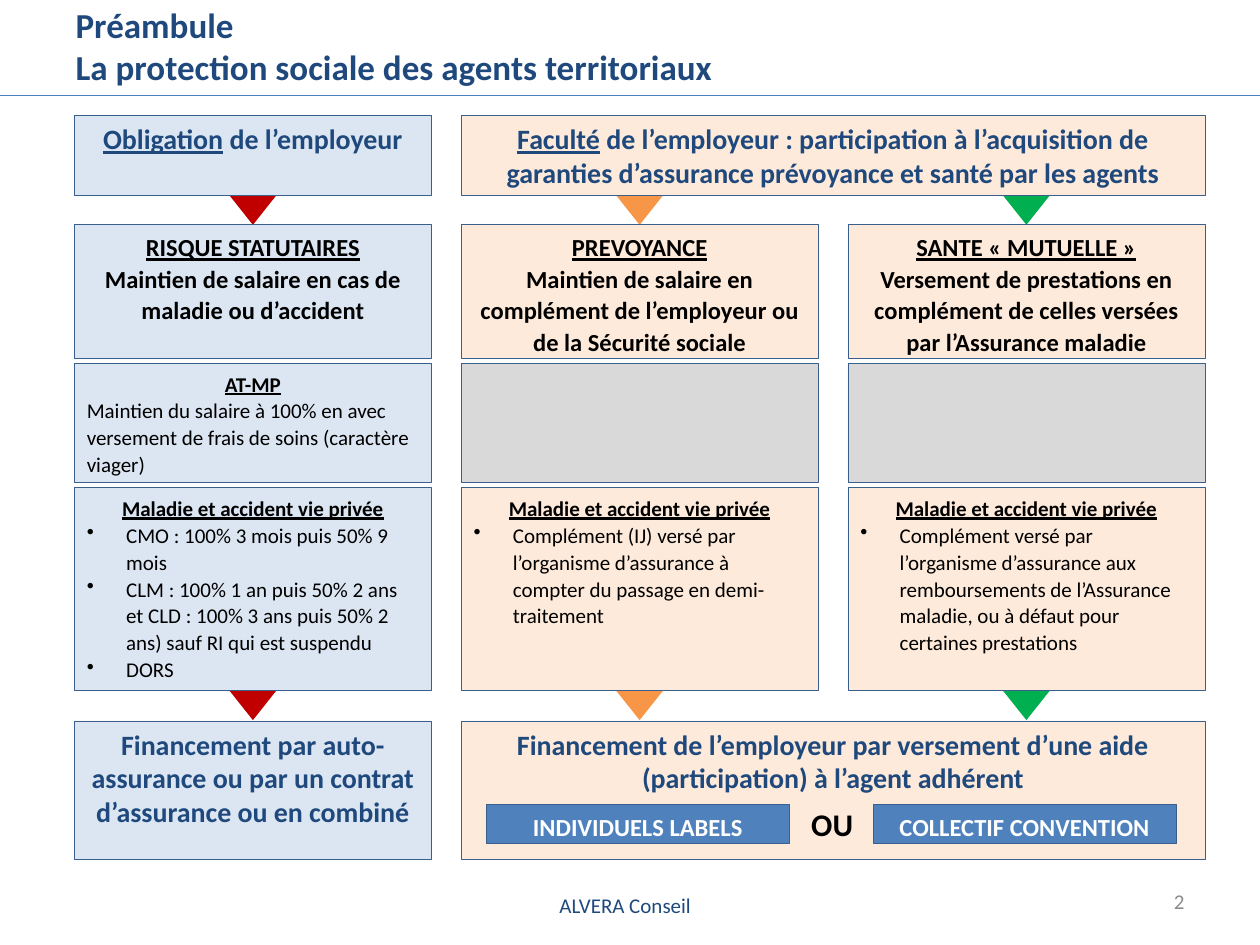
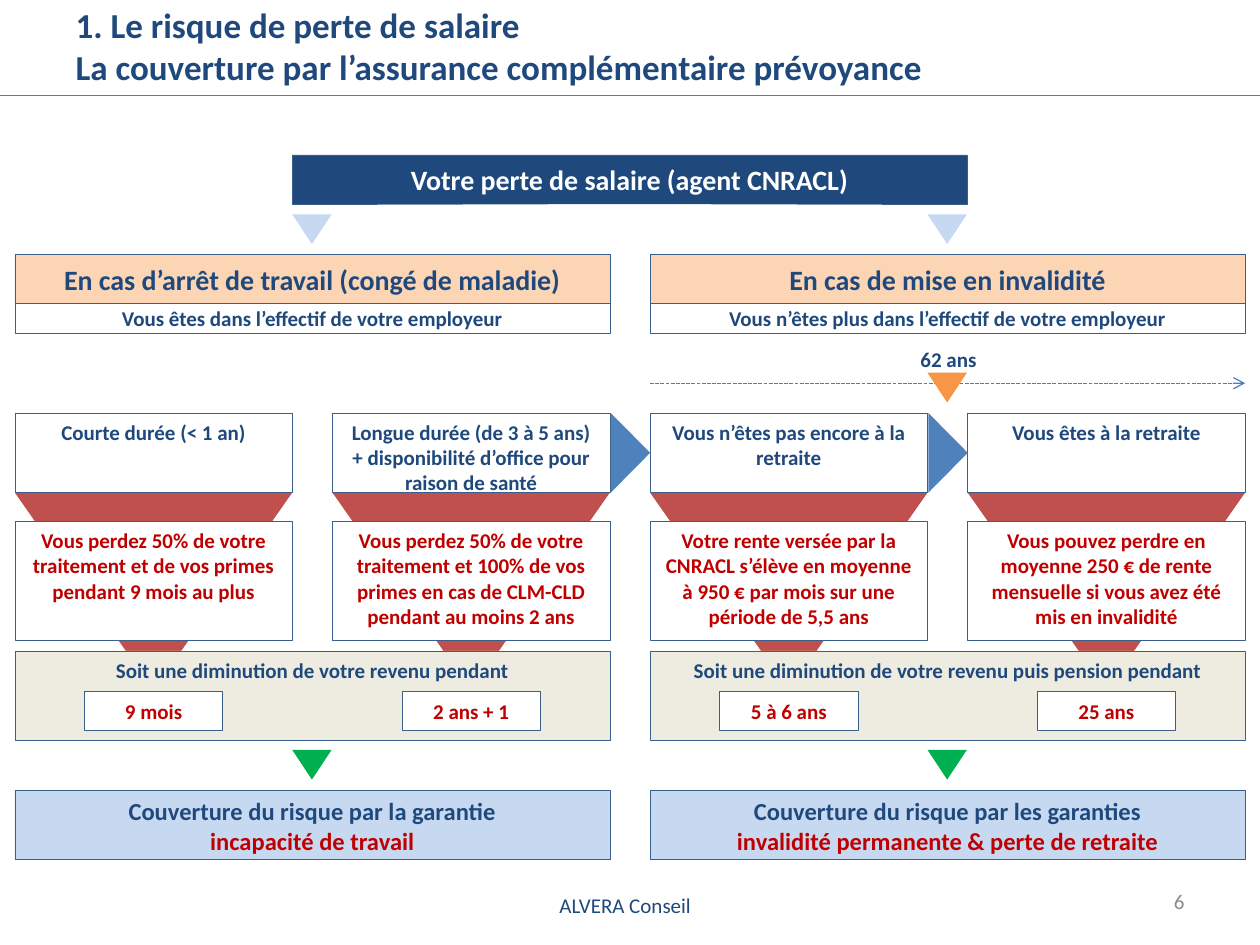
import lxml.etree
import pptx
import pptx.dml.color
import pptx.enum.dml
import pptx.enum.shapes
import pptx.enum.text
import pptx.oxml.ns
import pptx.util

NAVY = pptx.dml.color.RGBColor(0x1F, 0x49, 0x7D)
BLUE = pptx.dml.color.RGBColor(0x4F, 0x81, 0xBD)
RULE = pptx.dml.color.RGBColor(0x4B, 0x7E, 0xBC)
EDGE = pptx.dml.color.RGBColor(0x3A, 0x5F, 0x8C)
ICE = pptx.dml.color.RGBColor(0xDC, 0xE6, 0xF2)
SKY = pptx.dml.color.RGBColor(0xC6, 0xD9, 0xF1)
CREAM = pptx.dml.color.RGBColor(0xFD, 0xEA, 0xDA)
PEACH = pptx.dml.color.RGBColor(0xFC, 0xD5, 0xB5)
SAND = pptx.dml.color.RGBColor(0xEE, 0xEC, 0xE1)
GREY = pptx.dml.color.RGBColor(0xD9, 0xD9, 0xD9)
DIM = pptx.dml.color.RGBColor(0x8C, 0x8C, 0x8C)
RED = pptx.dml.color.RGBColor(0xC0, 0x00, 0x00)
BRICK = pptx.dml.color.RGBColor(0xC0, 0x50, 0x4D)
AMBER = pptx.dml.color.RGBColor(0xF7, 0x96, 0x46)
GREEN = pptx.dml.color.RGBColor(0x00, 0xB0, 0x50)
BLACK = pptx.dml.color.RGBColor(0, 0, 0)
WHITE = pptx.dml.color.RGBColor(0xFF, 0xFF, 0xFF)

RECT = pptx.enum.shapes.MSO_SHAPE.RECTANGLE
PEAK = pptx.enum.shapes.MSO_SHAPE.ISOSCELES_TRIANGLE
WIRE = pptx.enum.shapes.MSO_CONNECTOR.STRAIGHT
MID = pptx.enum.text.MSO_ANCHOR.MIDDLE
TOP = pptx.enum.text.MSO_ANCHOR.TOP
SIDES = {"c": pptx.enum.text.PP_ALIGN.CENTER, "r": pptx.enum.text.PP_ALIGN.RIGHT}
LEFT = pptx.enum.text.PP_ALIGN.LEFT


def write(shape, paras, size, tint, anchor=TOP, pitch=None):
    """Fill a shape with text.

    A para is a string (centred, bold) or a tuple: its kind (c, l, r or •),
    then runs of (text, marks), where b is bold, u underlined, r red.
    A newline in a run is a line break.
    """
    frame = shape.text_frame
    frame.word_wrap = True
    frame.vertical_anchor = anchor
    for i, para in enumerate(paras):
        kind, *runs = ("c", (para, "b")) if isinstance(para, str) else para
        par = frame.add_paragraph() if i else frame.paragraphs[0]
        par.alignment = SIDES.get(kind, LEFT)
        if pitch:
            par.line_spacing = pitch
        if kind == "•":
            props = par._p.get_or_add_pPr()
            props.set("marL", str(pptx.util.Pt(22.5)))
            props.set("indent", str(pptx.util.Pt(-22.5)))
            lxml.etree.SubElement(props, pptx.oxml.ns.qn("a:buChar"), char="•")
        for text, marks in runs:
            for j, piece in enumerate(text.split("\n")):
                if j:
                    par.add_line_break()
                run = par.add_run()
                run.text = piece
                run.font.name = "Calibri"
                run.font.size = pptx.util.Pt(size)
                run.font.bold = "b" in marks
                run.font.underline = "u" in marks
                run.font.color.rgb = RED if "r" in marks else tint


def draw(slide, kind, x, y, w, h, fill, turn=0):
    """Add an edged rectangle or a plain triangle."""
    shape = slide.shapes.add_shape(kind, *map(pptx.util.Pt, (x, y, w, h)))
    shape.shadow.inherit = False
    shape.rotation = turn
    shape.fill.solid()
    shape.fill.fore_color.rgb = fill
    if kind == RECT:
        shape.line.color.rgb = EDGE
        shape.line.width = pptx.util.Pt(0.25)
    else:
        shape.line.fill.background()
    return shape


deck = pptx.Presentation()
deck.slide_width = pptx.util.Pt(720)
deck.slide_height = pptx.util.Pt(540)

# Title, rule and footer of every slide
wires = []
heads = [
    ("Préambule\nLa protection sociale des agents territoriaux", "2"),
    ("1. Le risque de perte de salaire\n"
     "La couverture par l’assurance complémentaire prévoyance", "6"),
]
for head, num in heads:
    slide = deck.slides.add_slide(deck.slide_layouts[5])
    title = slide.shapes.title
    title.left, title.top, title.width, title.height = map(pptx.util.Pt, (36, 9.5, 648, 33))
    title.text_frame.auto_size = pptx.enum.text.MSO_AUTO_SIZE.NONE
    write(title, [("l", (head, "b"))], 20, NAVY, MID)
    wires.append(slide.shapes.add_connector(WIRE, 0, pptx.util.Pt(54.5),
                                            deck.slide_width, pptx.util.Pt(54.5)))
    for x, y, w, kind, text, tint in [(212.5, 502.5, 289.5, "c", "ALVERA Conseil", NAVY),
                                      (516, 500.5, 168, "r", num, DIM)]:
        foot = slide.shapes.add_textbox(*map(pptx.util.Pt, (x, y, w, 29)))
        write(foot, [(kind, (text, ""))], 12, tint, MID)

# Slide 1: three kinds of cover, from duty to funding
slide = deck.slides[0]
cols = [42.5 + 221 * i for i in range(3)]
wide, full = 204, 425

for x, tint in zip(cols, (RED, AMBER, GREEN)):
    for y in (111.5, 394.5):
        draw(slide, PEAK, x + (wide - 27) / 2, y, 27, 17, tint, 180)

bands = [
    (0, wide, ICE, ("c", ("Obligation", "bu"), (" de l’employeur", "b")),
     "Financement par auto-assurance ou par un contrat d’assurance ou en combiné"),
    (1, full, CREAM,
     ("c", ("Faculté", "bu"),
      (" de l’employeur : participation à l’acquisition de garanties "
       "d’assurance prévoyance et santé par les agents", "b")),
     "Financement de l’employeur par versement d’une aide (participation) à l’agent adhérent"),
]
for i, w, fill, duty, fund in bands:
    write(draw(slide, RECT, cols[i], 66, w, 45.5, fill), [duty], 16, NAVY)
    write(draw(slide, RECT, cols[i], 412, w, 79, fill), [fund], 16, NAVY)

covers = [
    (ICE, "RISQUE STATUTAIRES", "Maintien de salaire en cas de maladie ou d’accident",
     ["CMO : 100% 3 mois puis 50% 9 mois",
      "CLM : 100% 1 an puis 50% 2 ans et CLD : 100% 3 ans puis 50% 2 ans) "
      "sauf RI qui est suspendu",
      "DORS"]),
    (CREAM, "PREVOYANCE",
     "Maintien de salaire en complément de l’employeur ou de la Sécurité sociale",
     ["Complément (IJ) versé par l’organisme d’assurance à compter du passage "
      "en demi-traitement"]),
    (CREAM, "SANTE « MUTUELLE »",
     "Versement de prestations en complément de celles versées par l’Assurance maladie",
     ["Complément versé par l’organisme d’assurance aux remboursements de "
      "l’Assurance maladie, ou à défaut pour certaines prestations"]),
]
for x, (fill, name, goal, items) in zip(cols, covers):
    write(draw(slide, RECT, x, 128, wide, 76.5, fill),
          [("c", (name, "bu")), goal], 14, BLACK, pitch=1.07)
    work = draw(slide, RECT, x, 207.5, wide, 68, ICE if fill == ICE else GREY)
    if fill == ICE:
        write(work, [("c", ("AT-MP", "bu")),
                     ("l", ("Maintien du salaire à 100% en avec versement de "
                            "frais de soins (caractère viager)", ""))],
              12, BLACK, pitch=1.07)
    write(draw(slide, RECT, x, 278.5, wide, 116, fill),
          [("c", ("Maladie et accident vie privée", "bu"))]
          + [("•", (item, "")) for item in items], 12, BLACK, pitch=1.07)

for x, text in zip((278, 499), ("INDIVIDUELS LABELS", "COLLECTIF CONVENTION")):
    write(draw(slide, RECT, x, 459.5, 173, 22.5, BLUE), [text], 14, WHITE, pitch=1.07)
choice = slide.shapes.add_textbox(*map(pptx.util.Pt, (456.5, 456.5, 39, 29)))
write(choice, [("l", ("OU", "b"))], 18, BLACK)
choice.text_frame.word_wrap = False

# Slide 2: two halves of two cases each
slide = deck.slides[1]
cols = [8.5 + 181.5 * i for i in range(4)]
wide, half = 158.5, 340

for x in cols:
    draw(slide, PEAK, x, 281.5, wide, 113, BRICK, 180)
write(draw(slide, RECT, 167, 88.5, 385.5, 28, NAVY),
      ["Votre perte de salaire (agent CNRACL)"], 16, WHITE, MID)

halves = [
    ("En cas d’arrêt de travail (congé de maladie)",
     "Vous êtes dans l’effectif de votre employeur",
     "Soit une diminution de votre revenu pendant",
     "Couverture du risque par la garantie", "incapacité de travail"),
    ("En cas de mise en invalidité",
     "Vous n’êtes plus dans l’effectif de votre employeur",
     "Soit une diminution de votre revenu puis pension pendant",
     "Couverture du risque par les garanties", "invalidité permanente & perte de retraite"),
]
for x, mark, (case, state, drop, cover, risk) in zip(cols[::2], (167, 530), halves):
    draw(slide, PEAK, mark, 122.5, 22.5, 17, SKY, 180)
    write(draw(slide, RECT, x, 145.5, half, 28, PEACH), [case], 16, NAVY, MID)
    write(draw(slide, RECT, x, 173.5, half, 17, WHITE), [state], 12, NAVY, MID)
    write(draw(slide, RECT, x, 372, half, 51, SAND), [drop], 12, NAVY)
    draw(slide, PEAK, mark, 428.5, 22.5, 17, GREEN, 180)
    write(draw(slide, RECT, x, 451.5, half, 39.5, SKY),
          [cover, ("c", (risk, "br"))], 14, NAVY)

cases = [
    ("Courte durée (< 1 an)",
     "Vous perdez 50% de votre traitement et de vos primes pendant 9 mois au plus", "9 mois"),
    ("Longue durée (de 3 à 5 ans) + disponibilité d’office pour raison de santé",
     "Vous perdez 50% de votre traitement et 100% de vos primes en cas de CLM-CLD "
     "pendant au moins 2 ans", "2 ans + 1"),
    ("Vous n’êtes pas encore à la retraite",
     "Votre rente versée par la CNRACL s’élève en moyenne à 950 € par mois sur une "
     "période de 5,5 ans", "5 à 6 ans"),
    ("Vous êtes à la retraite",
     "Vous pouvez perdre en moyenne 250 € de rente mensuelle si vous avez été mis en "
     "invalidité", "25 ans"),
]
for x, (span, loss, time) in zip(cols, cases):
    write(draw(slide, RECT, x, 236, wide, 45.5, WHITE), [span], 12, NAVY)
    write(draw(slide, RECT, x, 298, wide, 68, WHITE), [loss], 12, RED)
    write(draw(slide, RECT, x + (wide - 79) / 2, 395, 79, 22.5, WHITE), [time], 12, RED, MID)
for x in cols[1:3]:
    draw(slide, PEAK, x + 147.5, 247.5, 45.5, 22.5, BLUE, 90)

# Age line
axis = slide.shapes.add_connector(WIRE, *map(pptx.util.Pt, (cols[2], 219, cols[2] + half, 219)))
axis.line.dash_style = pptx.enum.dml.MSO_LINE.SQUARE_DOT
wires.append(axis)
draw(slide, PEAK, 530, 213, 22.5, 17, AMBER, 180)
age = slide.shapes.add_textbox(*map(pptx.util.Pt, (513.5, 191, 57, 28)))
write(age, ["62 ans"], 12, NAVY, MID)

for wire in wires:
    wire.line.color.rgb = RULE
    wire.line.width = pptx.util.Pt(0.75)
    lxml.etree.SubElement(wire._element.spPr, pptx.oxml.ns.qn("a:effectLst"))
lxml.etree.SubElement(axis.line._get_or_add_ln(), pptx.oxml.ns.qn("a:tailEnd"), type="arrow")

deck.save("out.pptx")
